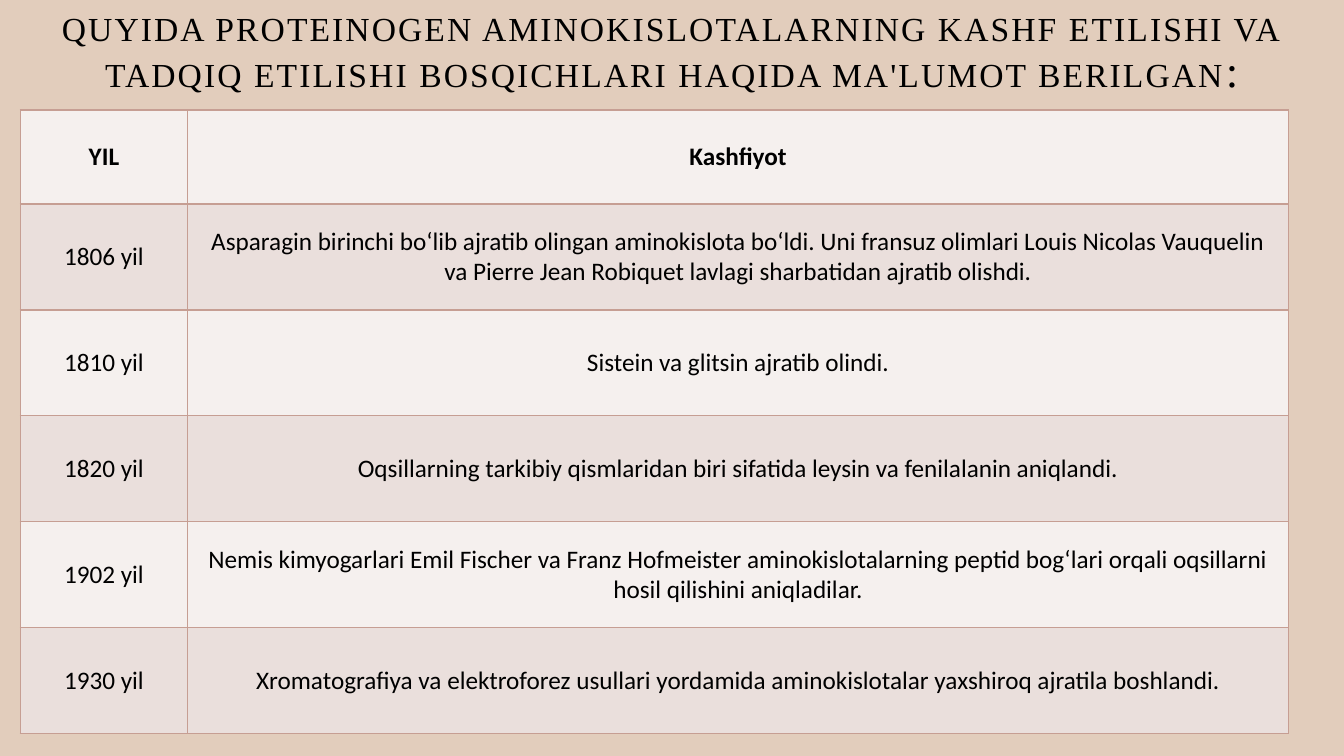
import pptx
import pptx.util
import pptx.dml.color
import pptx.enum.text
from dataclasses import dataclass
from lxml import etree
from pptx.oxml.ns import qn

Cm, Pt = pptx.util.Cm, pptx.util.Pt
RGB = pptx.dml.color.RGBColor.from_string
CENTER = pptx.enum.text.PP_ALIGN.CENTER
MIDDLE = pptx.enum.text.MSO_ANCHOR.MIDDLE


@dataclass(frozen=True)
class Theme:
    background: str = "E2CDBC"
    text: str = "000000"
    border: str = "C69E93"
    bands: tuple = ("F5F0EE", "EADFDC")
    title_font: str = "Times New Roman"
    table_font: str = "Calibri"
    title_size: int = 24
    colon_size: int = 32
    table_size: int = 18


theme = Theme()


def style_run(r, font, size, bold=False):
    r.font.name = font
    r.font.size = Pt(size)
    r.font.bold = bold
    r.font.color.rgb = RGB(theme.text)


def add_borders(cell):
    tc_pr = cell._tc.get_or_add_tcPr()
    for side in ("lnL", "lnR", "lnT", "lnB"):
        ln = etree.SubElement(tc_pr, qn(f"a:{side}"), w=str(Pt(1)))
        fill = etree.SubElement(ln, qn("a:solidFill"))
        etree.SubElement(fill, qn("a:srgbClr"), val=theme.border)


prs = pptx.Presentation()
prs.slide_width, prs.slide_height = Cm(33.87), Cm(19.05)
s = prs.slides.add_slide(prs.slide_layouts[6])
s.background.fill.solid()
s.background.fill.fore_color.rgb = RGB(theme.background)

# Title
title = s.shapes.add_textbox(Cm(0.51), Cm(0), Cm(32.84), Cm(2.77))
tf = title.text_frame
tf.word_wrap = True
tf.vertical_anchor = MIDDLE
p = tf.paragraphs[0]
p.alignment = CENTER
p.line_spacing = 0.9
title_parts = [
    ("QUYIDA PROTEINOGEN AMINOKISLOTALARNING KASHF ETILISHI VA "
     "TADQIQ ETILISHI BOSQICHLARI HAQIDA MA'LUMOT BERILGAN", theme.title_size),
    (":", theme.colon_size),
]
for text, size in title_parts:
    r = p.add_run()
    r.text = text
    style_run(r, theme.title_font, size)
    r.font._element.set("spc", "150")

# Discoveries table
discoveries = [
    ("YIL", "Kashfiyot"),
    ("1806 yil", "Asparagin birinchi bo‘lib ajratib olingan aminokislota bo‘ldi. "
     "Uni fransuz olimlari Louis Nicolas Vauquelin va Pierre Jean Robiquet "
     "lavlagi sharbatidan ajratib olishdi."),
    ("1810 yil", "Sistein va glitsin ajratib olindi."),
    ("1820 yil", "Oqsillarning tarkibiy qismlaridan biri sifatida leysin va "
     "fenilalanin aniqlandi."),
    ("1902 yil", "Nemis kimyogarlari Emil Fischer va Franz Hofmeister "
     "aminokislotalarning peptid bog‘lari orqali oqsillarni hosil qilishini aniqladilar."),
    ("1930 yil", "Xromatografiya va elektroforez usullari yordamida "
     "aminokislotalar yaxshiroq ajratila boshlandi."),
]
table = s.shapes.add_table(len(discoveries), 2, Cm(0.51), Cm(2.77),
                           Cm(31.96), Cm(15.72)).table
table.columns[0].width, table.columns[1].width = Cm(4.22), Cm(27.74)

for i, row in enumerate(discoveries):
    table.rows[i].height = Cm(2.67 if i else 2.37)
    for j, text in enumerate(row):
        cell = table.cell(i, j)
        add_borders(cell)
        cell.fill.solid()
        cell.fill.fore_color.rgb = RGB(theme.bands[i % 2])
        cell.vertical_anchor = MIDDLE
        p = cell.text_frame.paragraphs[0]
        p.text = text
        p.alignment = CENTER
        style_run(p.runs[0], theme.table_font, theme.table_size, bold=i == 0)

prs.save("out.pptx")
